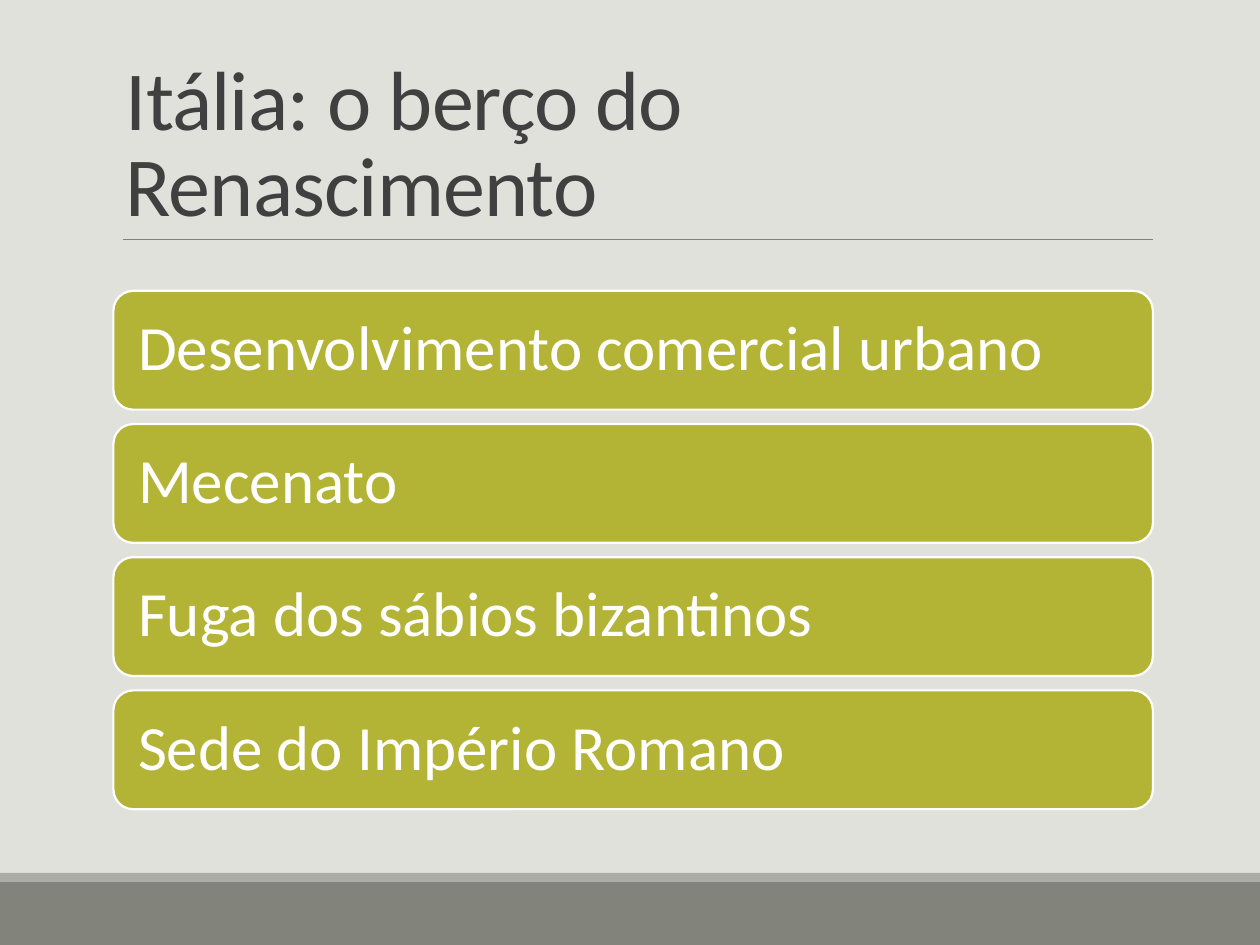
from dataclasses import dataclass

from pptx import Presentation
from pptx.dml.color import RGBColor
from pptx.enum.shapes import MSO_CONNECTOR, MSO_SHAPE
from pptx.enum.text import MSO_ANCHOR, PP_ALIGN
from pptx.oxml.ns import qn
from pptx.util import Pt
from lxml.etree import SubElement


@dataclass(frozen=True)
class Theme:
    font: str = "Calibri"
    back: str = "E1E1DB"
    band: str = "82847C"
    strip: str = "ACADA8"
    rule: str = "808080"
    dark: str = "404040"
    card: str = "B3B435"
    light: str = "FFFFFF"
    head: int = 48
    body: int = 36


def color(code):
    return RGBColor.from_string(code)


def write(frame, text, *, size, ink, font, lead, anchor, inset, track=0):
    """Put one left-aligned paragraph in a text frame."""
    frame.word_wrap = True
    frame.vertical_anchor = anchor
    frame.margin_left = frame.margin_right = Pt(inset[0])
    frame.margin_top = frame.margin_bottom = Pt(inset[1])
    para = frame.paragraphs[0]
    para.alignment = PP_ALIGN.LEFT
    para.line_spacing = lead
    run = para.add_run()
    run.text = text
    run.font.name = font
    run.font.size = Pt(size)
    run.font.color.rgb = color(ink)
    if track:
        run.font._element.set("spc", str(round(track * 100)))


class Deck:
    def __init__(self, theme, slide):
        self.theme = theme
        self.slide = slide
        fill = slide.background.fill
        fill.solid()
        fill.fore_color.rgb = color(theme.back)

    def block(self, kind, box, fill, edge=None):
        shape = self.slide.shapes.add_shape(kind, *map(Pt, box))
        shape.shadow.inherit = False
        shape.fill.solid()
        shape.fill.fore_color.rgb = color(fill)
        if edge:
            shape.line.color.rgb = color(edge)
            shape.line.width = Pt(1.25)
        else:
            shape.line.fill.background()
        return shape

    def rule(self, left, right, top):
        line = self.slide.shapes.add_connector(
            MSO_CONNECTOR.STRAIGHT, Pt(left), Pt(top), Pt(right), Pt(top))
        line.line.color.rgb = color(self.theme.rule)
        line.line.width = Pt(0.5)
        SubElement(line._element.spPr, qn("a:effectLst"))

    def title(self, text, box):
        area = self.slide.shapes.add_textbox(*map(Pt, box))
        write(area.text_frame, text, size=self.theme.head,
              ink=self.theme.dark, font=self.theme.font, lead=0.85,
              anchor=MSO_ANCHOR.BOTTOM, inset=(7.2, 3.6), track=-0.5)

    def card(self, text, box):
        shape = self.block(MSO_SHAPE.ROUNDED_RECTANGLE, box,
                           self.theme.card, self.theme.light)
        write(shape.text_frame, text, size=self.theme.body,
              ink=self.theme.light, font=self.theme.font, lead=0.9,
              anchor=MSO_ANCHOR.MIDDLE, inset=(10.8, 10.8))


def main():
    show = Presentation()
    show.slide_width, show.slide_height = Pt(720), Pt(540)
    theme = Theme()
    deck = Deck(theme, show.slides.add_slide(show.slide_layouts[6]))

    # Footer bands
    deck.block(MSO_SHAPE.RECTANGLE, (0, 504, 720, 36), theme.band)
    deck.block(MSO_SHAPE.RECTANGLE, (0, 498.8, 720, 5.2), theme.strip)

    # Title and its rule
    left, width = 64.8, 594
    deck.rule(70.4, left + width, 136.8)
    deck.title("Itália: o berço do Renascimento", (left, 22.6, width, 114.2))

    # Stacked cards
    top, height, gap = 166.2, 67.9, 8.2
    causes = ["Desenvolvimento comercial urbano", "Mecenato",
              "Fuga dos sábios bizantinos", "Sede do Império Romano"]
    for row, cause in enumerate(causes):
        deck.card(cause, (left, top + row * (height + gap), width, height))

    show.save("out.pptx")


if __name__ == "__main__":
    main()
